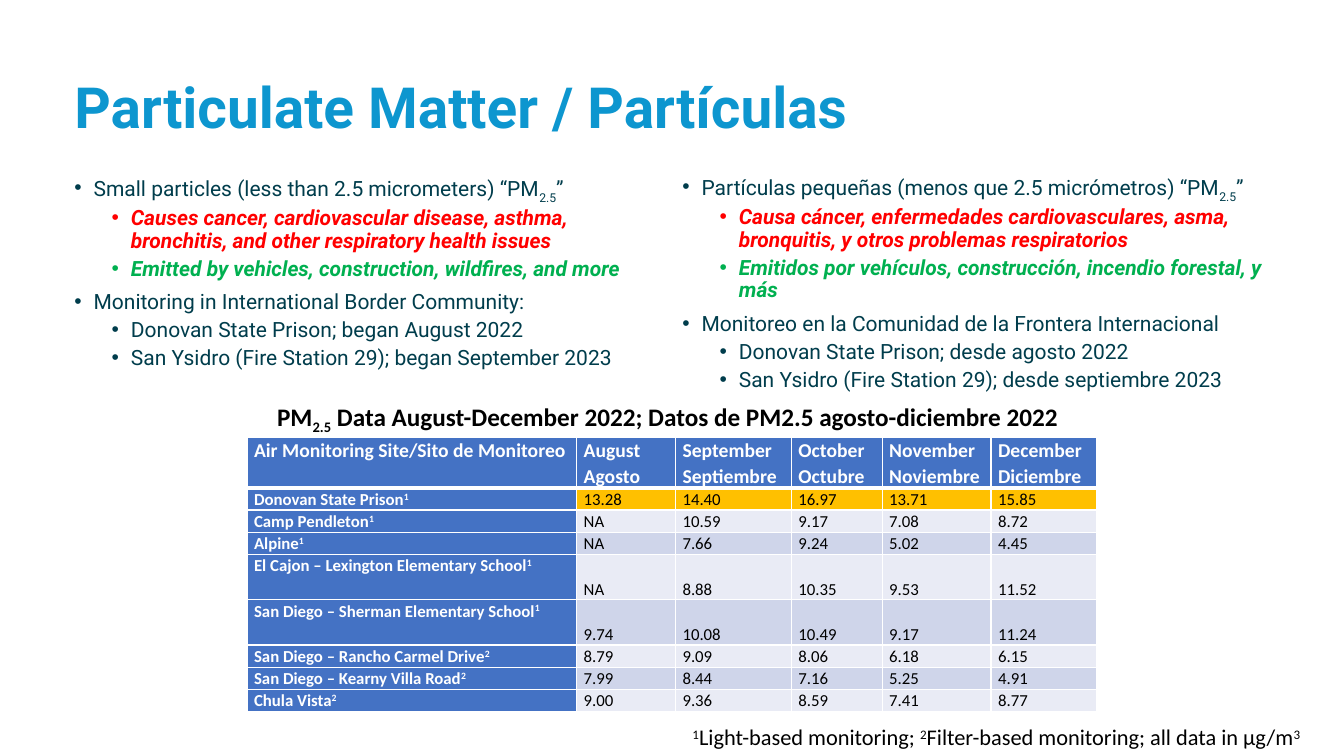
from pptx import Presentation
from pptx.dml.color import RGBColor as Rgb
from pptx.enum.text import MSO_ANCHOR as Anchor
from pptx.oxml import parse_xml
from pptx.oxml.ns import nsdecls
from pptx.util import Inches, Pt

BLUE, TEAL = Rgb(0x0D, 0x96, 0xCF), Rgb(0x00, 0x3D, 0x4C)
RED, GREEN = Rgb(0xFF, 0x00, 0x00), Rgb(0x00, 0xB0, 0x50)
WHITE, BLACK = Rgb(0xFF, 0xFF, 0xFF), Rgb(0x00, 0x00, 0x00)
HEAD, GOLD = Rgb(0x44, 0x72, 0xC4), Rgb(0xFF, 0xC0, 0x00)
BANDS = Rgb(0xCF, 0xD5, 0xEA), Rgb(0xE9, 0xEB, 0xF5)

# Text between two "~" is set as subscript or superscript.
TITLE = "Particulate Matter / Partículas"
CAPTION = "PM~2.5~ Data August-December 2022; Datos de PM2.5 agosto-diciembre 2022"
NOTE = "~1~Light-based monitoring; ~2~Filter-based monitoring; all data in µg/m~3~"

LISTS = [
    ((0.64, 1.7, 6.02, 4.76), [
        "Small particles (less than 2.5 micrometers) “PM~2.5~”",
        "Causes cancer, cardiovascular disease, asthma, bronchitis, "
        "and other respiratory health issues",
        "Emitted by vehicles, construction, wildfires, and more",
        "Monitoring in International Border Community:",
        "Donovan State Prison; began August 2022",
        "San Ysidro (Fire Station 29); began September 2023"]),
    ((6.67, 1.69, 6.02, 4.76), [
        "Partículas pequeñas (menos que 2.5 micrómetros) “PM~2.5~”",
        "Causa cáncer, enfermedades cardiovasculares, asma, bronquitis, "
        "y otros problemas respiratorios",
        "Emitidos por vehículos, construcción, incendio forestal, y más",
        "Monitoreo en la Comunidad de la Frontera Internacional",
        "Donovan State Prison; desde agosto 2022",
        "San Ysidro (Fire Station 29); desde septiembre 2023"]),
]

ROWS = [
    ("Air Monitoring Site/Sito de Monitoreo", "August\nAgosto",
     "September\nSeptiembre", "October\nOctubre", "November\nNoviembre",
     "December\nDiciembre"),
    ("Donovan State Prison~1~", "13.28", "14.40", "16.97", "13.71", "15.85"),
    ("Camp Pendleton~1~", "NA", "10.59", "9.17", "7.08", "8.72"),
    ("Alpine~1~", "NA", "7.66", "9.24", "5.02", "4.45"),
    ("El Cajon – Lexington Elementary School~1~",
     "NA", "8.88", "10.35", "9.53", "11.52"),
    ("San Diego – Sherman Elementary School~1~",
     "9.74", "10.08", "10.49", "9.17", "11.24"),
    ("San Diego – Rancho Carmel Drive~2~",
     "8.79", "9.09", "8.06", "6.18", "6.15"),
    ("San Diego – Kearny Villa Road~2~",
     "7.99", "8.44", "7.16", "5.25", "4.91"),
    ("Chula Vista~2~", "9.00", "9.36", "8.59", "7.41", "8.77"),
]
AREA = (2.45, 4.34, 8.43, 2.72)
WIDTHS = [3.27, 0.98, 1.15, 0.9, 1.08, 1.05]
TALL = (0, 4, 5)

HEADING = dict(name="Roboto", size=Pt(40.5), bold=True)
PLAIN = dict(name="Roboto", size=Pt(15))
STRONG = dict(PLAIN, bold=True, italic=True)
LABEL = dict(name="Calibri", size=Pt(18), bold=True)
SMALL = dict(name="Calibri", size=Pt(16))
TOP = dict(name="Calibri", size=Pt(14), bold=True)
SITE = dict(TOP, size=Pt(12))
VALUE = dict(SITE, bold=False)
INSETS = dict(margin_left=Inches(0.07), margin_right=Inches(0.07),
              margin_top=0, margin_bottom=0)

# Level, font and colour of each line in a list
LINES = [(0, PLAIN, TEAL), (1, STRONG, RED), (1, STRONG, GREEN),
         (0, PLAIN, TEAL), (1, PLAIN, TEAL), (1, PLAIN, TEAL)]
INDENTS, GAPS = (0.19, 0.56), (7.5, 3.8)


def assign(item, form):
    for key, val in form.items():
        setattr(item, key, val)


def write(para, text, form, color, base=30):
    """Add runs; parts between "~" are raised or lowered by base percent."""
    for i, part in enumerate(text.split("~")):
        for j, line in enumerate(part.split("\n")):
            if j:
                para.add_line_break()
            if not line:
                continue
            run = para.add_run()
            run.text = line
            assign(run.font, form)
            run.font.color.rgb = color
            if i % 2:
                run.font._element.set("baseline", str(base * 1000))


def add_box(slide, area):
    frame = slide.shapes.add_textbox(*map(Inches, area)).text_frame
    frame.word_wrap = True
    return frame


def add_list(slide, area, texts):
    frame = add_box(slide, area)
    for i, (text, (level, form, color)) in enumerate(zip(texts, LINES)):
        para = frame.add_paragraph() if i else frame.paragraphs[0]
        props = para._p.get_or_add_pPr()
        props.set("marL", str(Inches(INDENTS[level])))
        props.set("indent", str(-Inches(0.19)))
        for tag in ('a:buFont {} typeface="Arial"', 'a:buChar {} char="•"'):
            props.append(parse_xml(f"<{tag.format(nsdecls('a'))}/>"))
        para.level = level
        para.line_spacing = 0.9
        if i:
            para.space_before = Pt(GAPS[level])
        write(para, text, form, color, -25)


def add_edges(cell, row):
    props = cell._tc.get_or_add_tcPr()
    thick = {"T": row == 1, "B": row == 0}
    for side in "LRTB":
        width = Pt(3 if thick.get(side) else 1)
        props.append(parse_xml(
            f'<a:ln{side} {nsdecls("a")} w="{width}"><a:solidFill>'
            f'<a:srgbClr val="{WHITE}"/></a:solidFill></a:ln{side}>'))


def add_grid(slide):
    grid = slide.shapes.add_table(
        len(ROWS), len(WIDTHS), *map(Inches, AREA)).table
    grid.first_row = grid.horz_banding = False
    for col, width in zip(grid.columns, WIDTHS):
        col.width = Inches(width)
    for r, row in enumerate(ROWS):
        grid.rows[r].height = Inches(0.45 if r in TALL else 0.22)
        for c, text in enumerate(row):
            if r == 0:
                form, ink, fill = TOP, WHITE, HEAD
            elif c == 0:
                form, ink, fill = SITE, WHITE, HEAD
            else:
                form, ink = VALUE, BLACK
                fill = GOLD if r == 1 else BANDS[(r + 1) % 2]
            cell = grid.cell(r, c)
            assign(cell, INSETS)
            if r and c:
                cell.vertical_anchor = Anchor.BOTTOM
            add_edges(cell, r)
            cell.fill.solid()
            cell.fill.fore_color.rgb = fill
            para = cell.text_frame.paragraphs[0]
            para.line_spacing = 1.07
            write(para, text, form, ink)


def main():
    deck = Presentation()
    deck.slide_width, deck.slide_height = Inches(13.33), Inches(7.5)
    slide = deck.slides.add_slide(deck.slide_layouts[6])

    title = add_box(slide, (0.64, 0.37, 11.5, 1.45))
    title.vertical_anchor = Anchor.MIDDLE
    title.paragraphs[0].line_spacing = 0.9
    write(title.paragraphs[0], TITLE, HEADING, BLUE)

    for area, texts in LISTS:
        add_list(slide, area, texts)
    add_grid(slide)

    for area, text, form, base in (
            ((2.65, 3.93, 8.03, 0.4), CAPTION, LABEL, -25),
            ((6.77, 7.13, 6.5, 0.37), NOTE, SMALL, 30)):
        write(add_box(slide, area).paragraphs[0], text, form, BLACK, base)
    deck.save("out.pptx")


if __name__ == "__main__":
    main()
